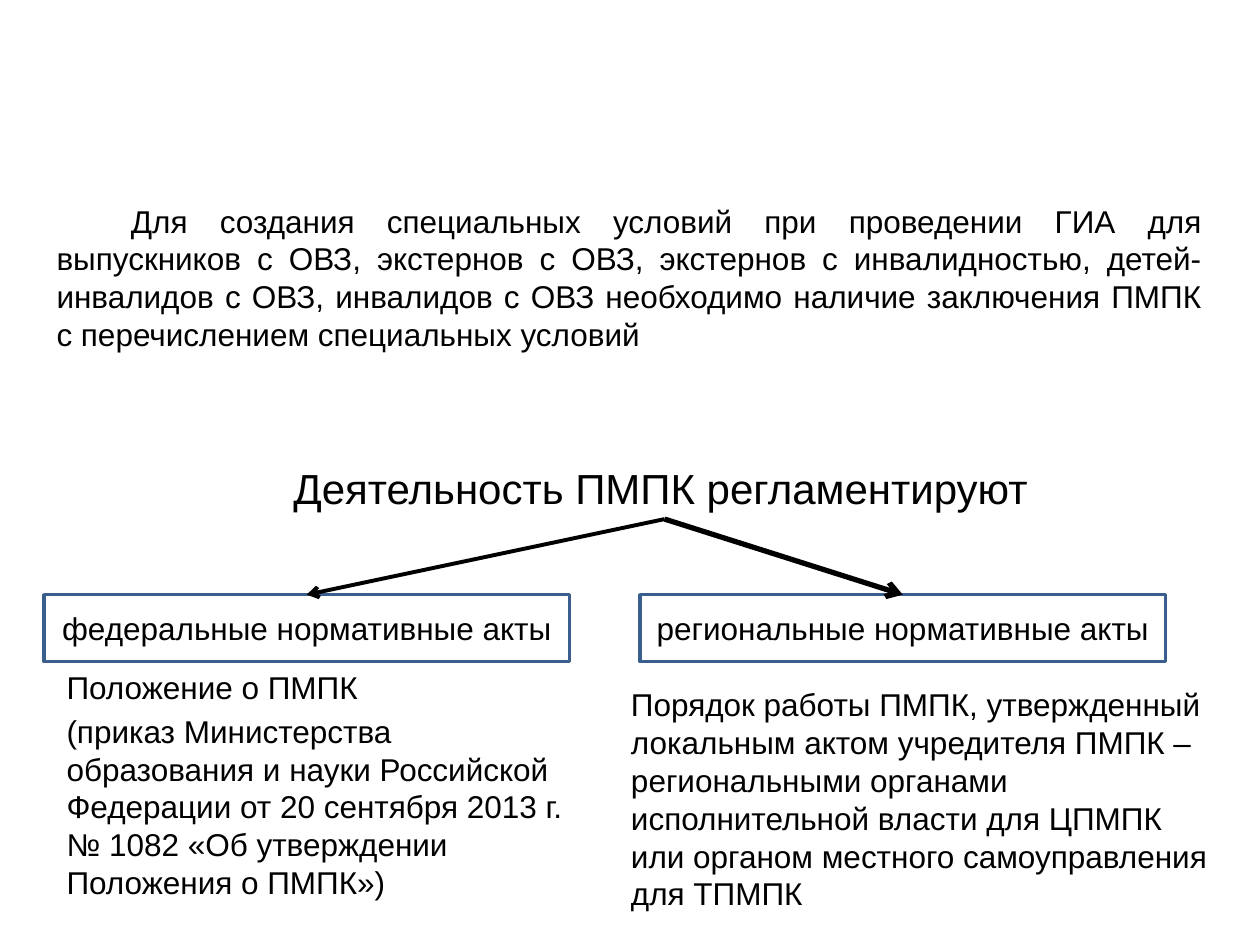
from lxml import etree
from pptx import Presentation
from pptx.dml.color import RGBColor
from pptx.enum.shapes import MSO_CONNECTOR, MSO_SHAPE
from pptx.enum.text import MSO_ANCHOR, MSO_AUTO_SIZE, PP_ALIGN
from pptx.oxml.ns import qn
from pptx.util import Inches, Pt

RECTANGLE = MSO_SHAPE.RECTANGLE
STRAIGHT = MSO_CONNECTOR.STRAIGHT
LEFT, CENTER, JUSTIFY = PP_ALIGN.LEFT, PP_ALIGN.CENTER, PP_ALIGN.JUSTIFY
MIDDLE = MSO_ANCHOR.MIDDLE
GROW = MSO_AUTO_SIZE.SHAPE_TO_FIT_TEXT
TOP_SIDE, BOTTOM_SIDE = 0, 2

BLACK, WHITE, BLUE = "000000", "FFFFFF", "3A5F8C"
BOX_TOP, BOX_WIDTH, BOX_HEIGHT = 4.72, 4.17, 0.53

INTRODUCTION = (
    "Для создания специальных условий при проведении ГИА для выпускников с ОВЗ, "
    "экстернов с ОВЗ, экстернов с инвалидностью, детей-инвалидов с ОВЗ, инвалидов "
    "с ОВЗ необходимо наличие заключения ПМПК с перечислением специальных условий"
)
FEDERAL_ACTS = [
    "Положение о ПМПК",
    "(приказ Министерства образования и науки Российской Федерации от 20 сентября "
    "2013 г. № 1082 «Об утверждении Положения о ПМПК»)",
]
REGIONAL_ACTS = (
    "Порядок работы ПМПК, утвержденный локальным актом учредителя ПМПК – "
    "региональными органами исполнительной власти для ЦПМПК или органом местного "
    "самоуправления для ТПМПК"
)


def color(value):
    return RGBColor.from_string(value)


def apply_format(target, values):
    for name, value in values.items():
        setattr(target, name, value)


def write_paragraphs(text_frame, texts, size=18, indent=0, **paragraph_format):
    for index, text in enumerate(texts):
        paragraph = text_frame.paragraphs[0] if index == 0 else text_frame.add_paragraph()
        apply_format(paragraph, paragraph_format)
        if indent:
            paragraph._p.get_or_add_pPr().set("indent", str(Inches(indent)))
        run = paragraph.add_run()
        run.text = text
        apply_format(run.font, {"name": "Arial", "size": Pt(size)})
        run.font.color.rgb = color(BLACK)


def add_text(slide, bounds, texts, wrap=True, **text_format):
    shape = slide.shapes.add_textbox(*map(Inches, bounds))
    apply_format(shape.text_frame, {"word_wrap": wrap, "auto_size": GROW})
    write_paragraphs(shape.text_frame, texts, **text_format)
    return shape


def add_box(slide, left, text):
    bounds = (left, BOX_TOP, BOX_WIDTH, BOX_HEIGHT)
    shape = slide.shapes.add_shape(RECTANGLE, *map(Inches, bounds))
    shape.shadow.inherit = False
    shape.fill.solid()
    shape.fill.fore_color.rgb = color(WHITE)
    shape.line.color.rgb = color(BLUE)
    shape.line.width = Pt(2)
    apply_format(shape.text_frame, {"word_wrap": True, "vertical_anchor": MIDDLE})
    write_paragraphs(shape.text_frame, [text], alignment=CENTER)
    return shape


def add_arrow(slide, source, target, width):
    connector = slide.shapes.add_connector(STRAIGHT, 0, 0, 0, 0)
    connector.begin_connect(source, BOTTOM_SIDE)
    connector.end_connect(target, TOP_SIDE)
    connector.line.color.rgb = color(BLACK)
    connector.line.width = Pt(width)
    etree.SubElement(connector.line._get_or_add_ln(), qn("a:tailEnd"), type="arrow")
    etree.SubElement(connector._element.spPr, qn("a:effectLst"))


def main():
    presentation = Presentation()
    presentation.slide_width = Inches(10)
    presentation.slide_height = Inches(7.5)
    slide = presentation.slides.add_slide(presentation.slide_layouts[6])

    regional_box = add_box(slide, 5.08, "региональные нормативные акты")
    federal_box = add_box(slide, 0.35, "федеральные нормативные акты")
    add_text(slide, (0.35, 1.55, 9.29, 1.31), [INTRODUCTION], alignment=JUSTIFY, indent=0.59)
    heading = add_text(
        slide, (2.23, 3.62, 6.09, 0.5), ["Деятельность ПМПК регламентируют"],
        wrap=False, size=24, alignment=LEFT,
    )
    add_text(slide, (0.43, 5.25, 4.17, 1.98), FEDERAL_ACTS, space_before=Pt(3.6))
    add_text(slide, (4.91, 5.39, 4.9, 1.92), [REGIONAL_ACTS])
    add_arrow(slide, heading, federal_box, 2.25)
    add_arrow(slide, heading, regional_box, 3)

    presentation.save("out.pptx")


if __name__ == "__main__":
    main()
